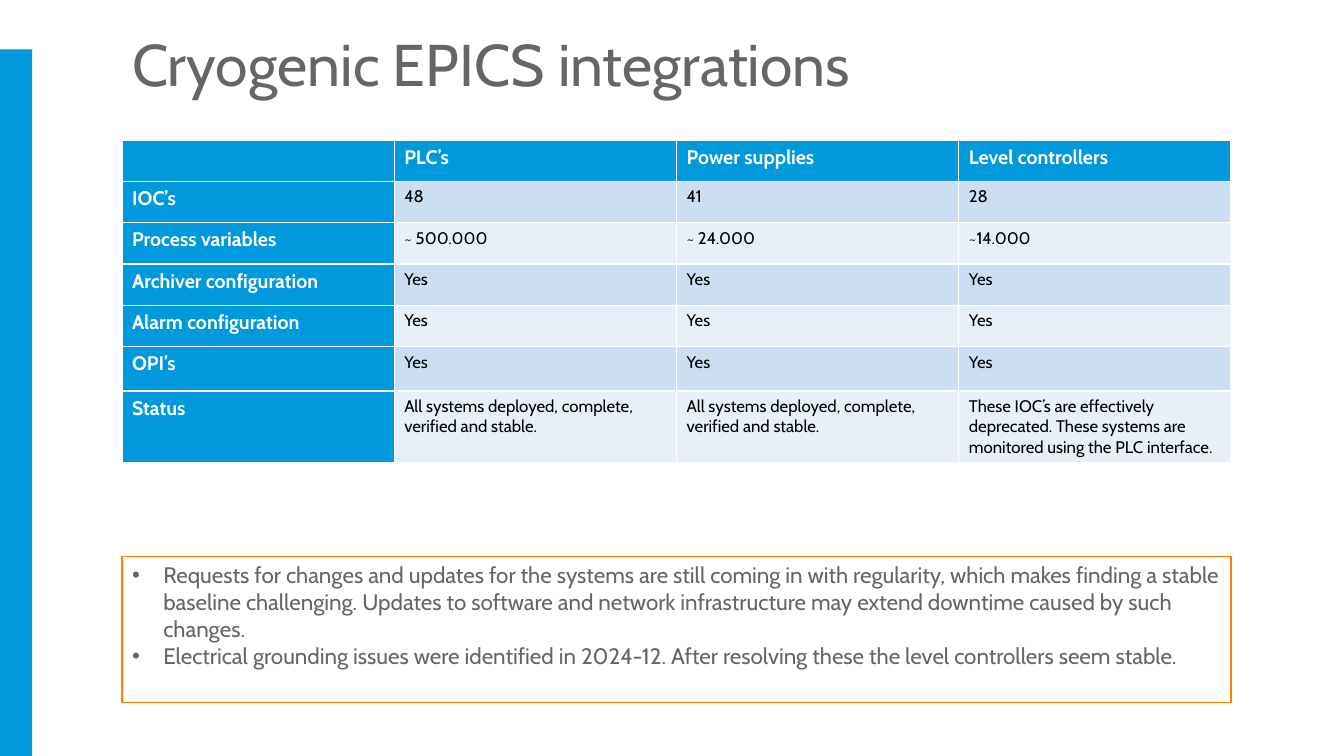
from pptx import Presentation
from pptx.dml.color import RGBColor
from pptx.enum.shapes import MSO_SHAPE
from pptx.enum.text import MSO_ANCHOR, MSO_AUTO_SIZE, PP_ALIGN
from pptx.oxml.ns import qn
from pptx.util import Inches, Pt

RECTANGLE = MSO_SHAPE.RECTANGLE
LEFT = PP_ALIGN.LEFT
TOP, MIDDLE = MSO_ANCHOR.TOP, MSO_ANCHOR.MIDDLE
NO_AUTOFIT = MSO_AUTO_SIZE.NONE

BLUE = RGBColor(0x00, 0x99, 0xDC)
BAND_DARK = RGBColor(0xCC, 0xDE, 0xF2)
BAND_LIGHT = RGBColor(0xE7, 0xEF, 0xF9)
ORANGE = RGBColor(0xFF, 0x7D, 0x00)
GREY = RGBColor(0x66, 0x66, 0x66)
WHITE = RGBColor(0xFF, 0xFF, 0xFF)
BLACK = RGBColor(0x00, 0x00, 0x00)

FONT = "Cabin"
SLIDE_W, SLIDE_H = Inches(13.33), Inches(7.5)
MARGIN = Inches(1.21)
CONTENT_W = Inches(11)
COLUMN_WIDTHS = [2.7, 2.8, 2.8, 2.7]
ROW_HEIGHTS = [0.41] * 5 + [0.44, 0.71]

DEPLOYED = "All systems deployed, complete, verified and stable."
INTEGRATIONS = [
    ["", "PLC’s", "Power supplies", "Level controllers"],
    ["IOC’s", "48", "41", "28"],
    ["Process variables", "~ 500.000", "~ 24.000", "~14.000"],
    ["Archiver configuration"] + ["Yes"] * 3,
    ["Alarm configuration"] + ["Yes"] * 3,
    ["OPI’s"] + ["Yes"] * 3,
    ["Status", DEPLOYED, DEPLOYED,
     "These IOC’s are effectively deprecated. These systems are monitored "
     "using the PLC interface."],
]
REMARKS = [
    "Requests for changes and updates for the systems are still coming in with "
    "regularity, which makes finding a stable baseline challenging. Updates to "
    "software and network infrastructure may extend downtime caused by such changes.",
    "Electrical grounding issues were identified in 2024-12. After resolving "
    "these the level controllers seem stable.",
]


def place(shape, left, top, width, height):
    shape.left, shape.top, shape.width, shape.height = left, top, width, height


def style_text(paragraph, size, color, bold=False):
    font = paragraph.font
    font.name, font.size, font.bold = FONT, Pt(size), bold
    font.color.rgb = color


def add_bullet(paragraph, indent):
    properties = paragraph._p.get_or_add_pPr()
    properties.set("marL", str(indent))
    properties.set("indent", str(-indent))
    bullet = properties.makeelement(qn("a:buChar"), {"char": "•"})
    properties.append(bullet)


def add_side_bar(slide):
    top = Inches(0.49)
    bar = slide.shapes.add_shape(RECTANGLE, 0, top, Inches(0.32), SLIDE_H - top)
    bar.shadow.inherit = False
    bar.fill.solid()
    bar.fill.fore_color.rgb = BLUE
    bar.line.fill.background()


def set_title(title, text):
    place(title, MARGIN, Inches(0.29), Inches(10.24), Inches(0.72))
    frame = title.text_frame
    frame.text = text
    frame.auto_size = NO_AUTOFIT
    frame.vertical_anchor = MIDDLE
    frame.margin_bottom = Inches(0.02)
    heading = frame.paragraphs[0]
    heading.alignment = LEFT
    heading.line_spacing = 0.9
    style_text(heading, 42, GREY)


def add_integration_table(slide):
    table = slide.shapes.add_table(
        len(ROW_HEIGHTS), len(COLUMN_WIDTHS), MARGIN, Inches(1.39),
        CONTENT_W, Inches(sum(ROW_HEIGHTS))).table
    table.first_col = True
    for column, width in zip(table.columns, COLUMN_WIDTHS):
        column.width = Inches(width)
    for row, height in zip(table.rows, ROW_HEIGHTS):
        row.height = Inches(height)

    for r, values in enumerate(INTEGRATIONS):
        band = BAND_DARK if r % 2 else BAND_LIGHT
        for c, value in enumerate(values):
            is_header = r == 0 or c == 0
            cell = table.cell(r, c)
            cell.text = value
            cell.fill.solid()
            cell.fill.fore_color.rgb = BLUE if is_header else band
            style_text(cell.text_frame.paragraphs[0], 14 if is_header else 12,
                       WHITE if is_header else BLACK, is_header)


def set_remarks(body, remarks):
    place(body, MARGIN, Inches(5.52), CONTENT_W, Inches(1.45))
    body.fill.solid()
    body.fill.fore_color.rgb = WHITE
    body.line.color.rgb = ORANGE
    body.line.width = Pt(1)
    frame = body.text_frame
    frame.text = "\n".join(remarks)
    frame.auto_size = NO_AUTOFIT
    frame.vertical_anchor = TOP
    for remark in frame.paragraphs:
        add_bullet(remark, Inches(0.31))
        remark.space_before = Pt(0)
        style_text(remark, 16, GREY)


def main():
    prs = Presentation()
    prs.slide_width, prs.slide_height = SLIDE_W, SLIDE_H
    slide = prs.slides.add_slide(prs.slide_layouts[1])

    # Heading and side accent
    add_side_bar(slide)
    set_title(slide.shapes.title, "Cryogenic EPICS integrations")

    # Integration overview and remarks
    add_integration_table(slide)
    set_remarks(slide.placeholders[1], REMARKS)

    prs.save("out.pptx")


if __name__ == "__main__":
    main()
